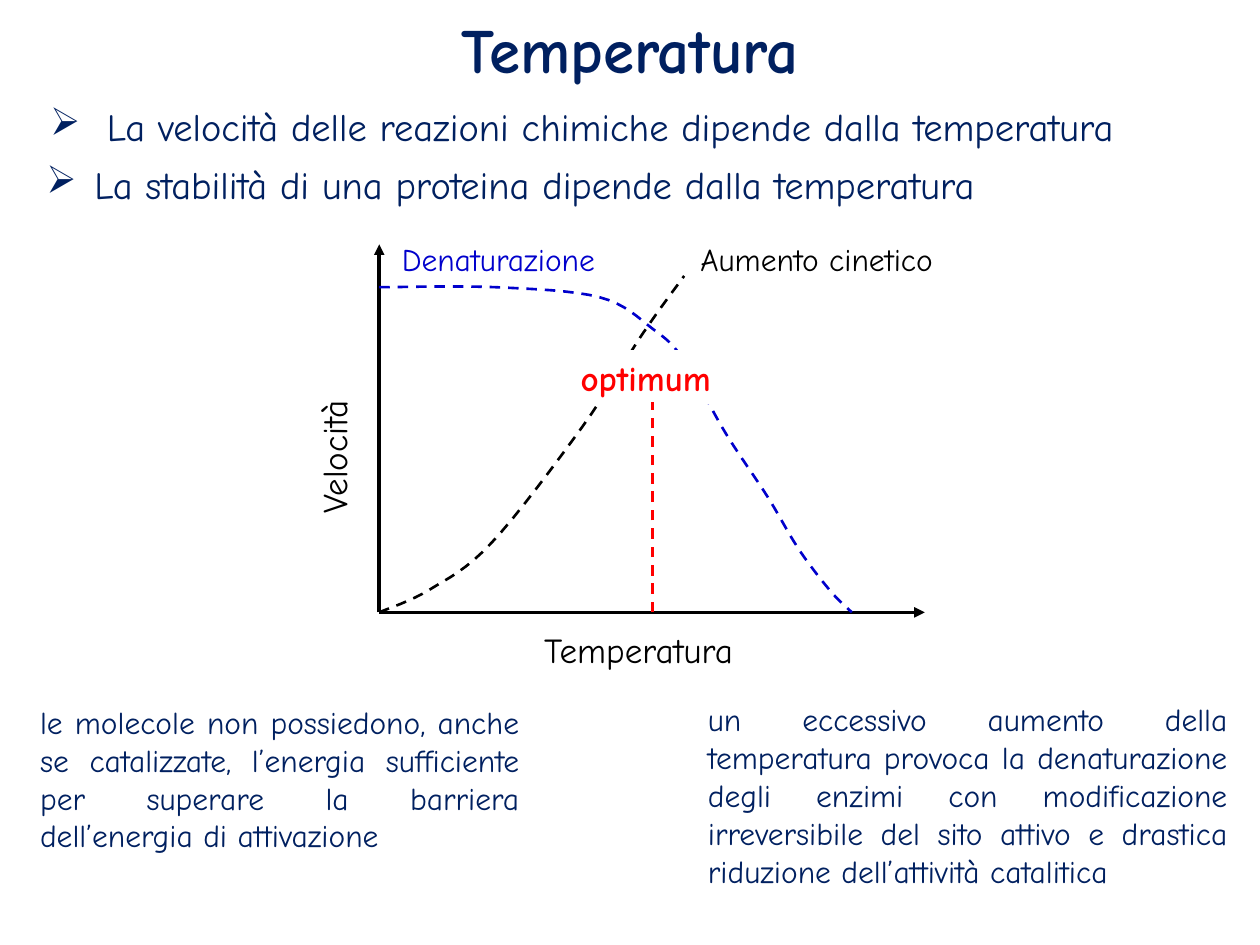
from collections import namedtuple
from lxml.etree import SubElement
from pptx import Presentation
from pptx.dml.color import RGBColor
from pptx.enum.dml import MSO_LINE_DASH_STYLE as DASH
from pptx.enum.shapes import MSO_CONNECTOR as CONN
from pptx.enum.text import MSO_ANCHOR as ANCHOR, PP_ALIGN as ALIGN
from pptx.oxml.ns import qn
from pptx.util import Inches, Pt

FONT = "Comic Neue"
NAVY = RGBColor(0x00, 0x20, 0x60)
BLACK = RGBColor(0x00, 0x00, 0x00)
BLUE = RGBColor(0x00, 0x00, 0xCC)
RED = RGBColor(0xFF, 0x00, 0x00)
WHITE = RGBColor(0xFF, 0xFF, 0xFF)

CELL = Inches(0.01)
COLUMNS, ROWS = 1000, 750
AXIS_WIDTH, CURVE_WIDTH = 2, 1.5
STEPS = 8

Box = namedtuple("Box", "left top width height")

TITLE_BOX = Box(0, -11, COLUMNS, 99)
GRAPH_BOX = Box(301, 194, 433, 292)
BULLETS = [
    (Box(30, 77, 990, 55), 45, "La velocità delle reazioni chimiche dipende dalla temperatura"),
    (Box(27, 123, 990, 64), 38, "La stabilità di una proteina dipende dalla temperatura"),
]
EXPLANATIONS = [
    (Box(22, 553, 400, 162),
     "le molecole non possiedono, anche se catalizzate, l’energia sufficiente "
     "per superare la barriera dell’energia di attivazione"),
    (Box(552, 551, 432, 192),
     "un eccessivo aumento della temperatura provoca la denaturazione degli enzimi "
     "con modificazione irreversibile del sito attivo e drastica riduzione "
     "dell’attività catalitica"),
]
KINETIC_RISE = [(0, 0), (40, 18), (89, 55), (161, 147), (209, 221), (242, 267)]
DENATURATION = [(0, 258), (92, 258), (175, 250), (217, 225), (242, 200),
                (275, 142), (308, 92), (333, 50), (358, 17), (375, 0)]


def cells(*values):
    """Turn grid cells into slide lengths."""
    return [int(v * CELL) for v in values]


def format_text(tf, text, size, color, align=ALIGN.LEFT, bold=False):
    """Fill a text frame with one formatted paragraph."""
    tf.text = text
    p = tf.paragraphs[0]
    p.alignment = align
    font = p.runs[0].font
    font.name, font.size, font.bold = FONT, Pt(size), bold
    font.color.rgb = color


def add_text(slide, box, text, size, color, align=ALIGN.LEFT, bold=False, wrap=True):
    """Add a text box and return it."""
    sp = slide.shapes.add_textbox(*cells(*box))
    sp.text_frame.word_wrap = wrap
    format_text(sp.text_frame, text, size, color, align, bold)
    return sp


def add_title(slide, box, text):
    """Move and format the title placeholder."""
    sp = slide.shapes.title
    sp.left, sp.top, sp.width, sp.height = cells(*box)
    sp.text_frame.vertical_anchor = ANCHOR.MIDDLE
    format_text(sp.text_frame, text, 36, NAVY, ALIGN.CENTER, bold=True)


def add_bullet(slide, box, indent, text):
    """Add an arrow-bulleted statement with a hanging indent."""
    sp = add_text(slide, box, text, 22, NAVY, ALIGN.JUSTIFY)
    pPr = sp.text_frame.paragraphs[0]._p.get_or_add_pPr()
    hang, = cells(indent)
    pPr.set("marL", str(hang))
    pPr.set("indent", str(-hang))
    SubElement(pPr, qn("a:buChar"), char="➢")


def style_line(line, color, width, dashed):
    """Set the colour, width and dash of a line."""
    line.color.rgb = color
    line.width = Pt(width)
    if dashed:
        line.dash_style = DASH.DASH


def add_line(slide, start, end, color, width, dashed=False, arrow=False):
    """Draw a straight line, optionally dashed or ending in an arrow."""
    connector = slide.shapes.add_connector(CONN.STRAIGHT, *cells(*start, *end))
    style_line(connector.line, color, width, dashed)
    spPr = connector._element.spPr
    if arrow:
        SubElement(spPr.find(qn("a:ln")), qn("a:tailEnd"), type="triangle")
    SubElement(spPr, qn("a:effectLst"))


def spline(a, b, c, d, t):
    """Return the Catmull-Rom value at share t of the way from b to c."""
    return b + t / 2 * (c - a + t * (2*a - 5*b + 4*c - d + t * (3*(b - c) + d - a)))


def smooth(knots):
    """Join the knots with a smooth chain of short segments."""
    padded = [knots[0], *knots, knots[-1]]
    points = [knots[0]]
    for four in zip(padded, padded[1:], padded[2:], padded[3:]):
        xs, ys = zip(*four)
        for step in range(1, STEPS + 1):
            t = step / STEPS
            points.append((spline(*xs, t), spline(*ys, t)))
    return points


def add_curve(slide, origin, knots, color):
    """Draw a dashed curve through knots measured right and up from the origin."""
    x0, y0 = origin
    start, *rest = [tuple(cells(x0 + x, y0 - y)) for x, y in smooth(knots)]
    builder = slide.shapes.build_freeform(*start)
    builder.add_line_segments(rest, close=False)
    sp = builder.convert_to_shape()
    sp.shadow.inherit = False
    sp.fill.background()
    style_line(sp.line, color, CURVE_WIDTH, dashed=True)


def add_axes(slide, box):
    """Draw both arrows from the origin and name them."""
    base = box.top + box.height
    for end in ((box.left, box.top), (box.left + box.width, base)):
        add_line(slide, (box.left, base), end, BLACK, AXIS_WIDTH, arrow=True)
    add_text(slide, Box(box.left + 121, base + 8, 189, 43),
             "Temperatura", 20, BLACK, wrap=False)
    speed = add_text(slide, Box(box.left - 103, box.top + 135, 133, 43),
                     "Velocità", 20, BLACK, wrap=False)
    speed.rotation = 270


def add_optimum(slide, box):
    """Mark the temperature where the curves balance, halfway along the axis."""
    middle, base = box.left + box.width // 2 + 1, box.top + box.height
    label = add_text(slide, Box(middle - 67, box.top + 84, 128, 43),
                     "optimum", 20, RED, bold=True, wrap=False)
    label.fill.solid()
    label.fill.fore_color.rgb = WHITE
    add_line(slide, (middle, base), (middle, box.top + 125), RED, CURVE_WIDTH, dashed=True)


def add_graph(slide, box):
    """Draw the speed against temperature graph."""
    origin = (box.left, box.top + box.height)
    curves = [("Aumento cinetico", KINETIC_RISE, BLACK, 245),
              ("Denaturazione", DENATURATION, BLUE, 8)]
    add_axes(slide, box)
    for name, knots, color, offset in curves:
        add_curve(slide, origin, knots, color)
        add_text(slide, Box(box.left + offset, box.top - 8, 205, 40),
                 name, 18, color, wrap=False)
    add_optimum(slide, box)


def main():
    """Build and save the slide."""
    prs = Presentation()
    prs.slide_width, prs.slide_height = cells(COLUMNS, ROWS)
    slide = prs.slides.add_slide(prs.slide_layouts[5])
    add_title(slide, TITLE_BOX, "Temperatura")
    for box, indent, text in BULLETS:
        add_bullet(slide, box, indent, text)
    add_graph(slide, GRAPH_BOX)
    for box, text in EXPLANATIONS:
        add_text(slide, box, text, 18, NAVY, ALIGN.JUSTIFY)
    prs.save("out.pptx")


if __name__ == "__main__":
    main()
